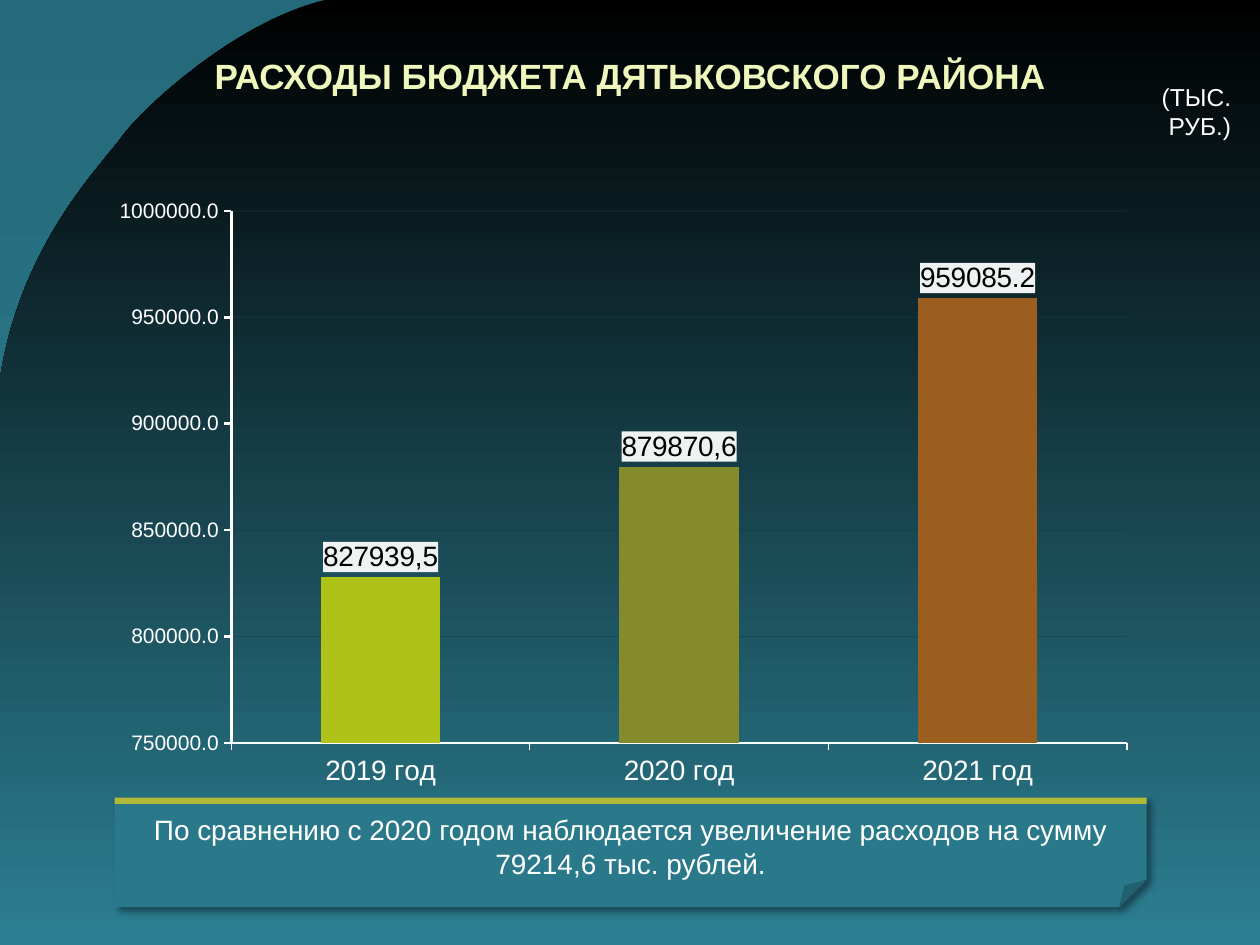
from lxml.etree import fromstring
from pptx import Presentation
from pptx.chart.data import CategoryChartData
from pptx.dml.color import RGBColor
from pptx.enum.chart import XL_CHART_TYPE as Chart, XL_LABEL_POSITION as Spot
from pptx.enum.chart import XL_TICK_MARK as Tick
from pptx.enum.shapes import MSO_SHAPE as Shape
from pptx.enum.text import MSO_ANCHOR as Anchor, PP_ALIGN as Align
from pptx.oxml.ns import nsdecls, qn
from pptx.util import Inches, Pt

COLORS = {
    "white": "FFFFFF", "black": "000000", "top": "256A7A", "teal": "2C7F92",
    "title": "F0F7BD", "note": "2A798B", "strip": "B2B838", "grid": "163F49",
    "label": "EFF2F3", "lime": "AEC218", "olive": "858A2A", "rust": "9C5E1F",
}
NS = nsdecls("a", "c")
SHADOW = (
    f'<a:effectLst {NS}><a:outerShdw blurRad="{{blur}}" dist="{{dist}}" dir="2700000">'
    '<a:srgbClr val="000000"><a:alpha val="{alpha}"/></a:srgbClr>'
    "</a:outerShdw></a:effectLst>"
)


def rgb(name):
    return RGBColor.from_string(COLORS[name])


def style(frame, size, color, align):
    par = frame.paragraphs[0]
    par.alignment = align
    font = par.runs[0].font
    font.name, font.size = "Arial", Pt(size)
    font.color.rgb = rgb(color)
    return font


prs = Presentation()
prs.slide_width, prs.slide_height = Inches(10), Inches(7.5)
slide = prs.slides.add_slide(prs.slide_layouts[5])
shapes = slide.shapes

# Backdrop: the curve is sampled from its Bezier segments
start = (2.58, 0)
curves = [
    ((1.9, 0.16), (1.16, 0.83), (0.98, 1.07)),
    ((0.8, 1.32), (0.16, 1.94), (0, 3.01)),
]
dots = []
here = start
for one, two, end in curves:
    for step in range(1, 31):
        t = step / 30
        dots.append(tuple(
            Inches((1 - t) ** 3 * a + 3 * t * (1 - t) ** 2 * b
                   + 3 * t * t * (1 - t) * c + t ** 3 * d)
            for a, b, c, d in zip(here, one, two, end)))
    here = end
dots += [(Inches(x), Inches(y)) for x, y in ((0, 7.5), (10, 7.5), (10, 0))]
outline = shapes.build_freeform(Inches(start[0]), Inches(start[1]), scale=1.0)
outline.add_line_segments(dots, close=True)
curve = outline.convert_to_shape()
curve.shadow.inherit = False
curve.line.fill.background()
for fill, top in ((slide.background.fill, "top"), (curve.fill, "black")):
    fill.gradient()
    fill.gradient_angle = 270
    for stop, color in zip(fill.gradient_stops, (top, "teal")):
        stop.color.rgb = rgb(color)

# Chart
data = CategoryChartData(number_format="0.0")
data.categories = ["2019 год", "2020 год", "2021 год"]
data.add_series("Series 1", (827939.5, 879870.6, 959085.2))
chart = shapes.add_chart(
    Chart.COLUMN_CLUSTERED, Inches(0.91), Inches(1.58), Inches(8.19), Inches(4.73), data
).chart
chart.has_legend = chart.has_title = False
chart.font.name, chart.font.size = "Arial", Pt(16)
chart.font.color.rgb = rgb("white")
area = chart._chartSpace.chart.plotArea
for old in area.findall(qn("c:layout")):
    area.remove(old)
box = "".join(
    f'<c:{tag} val="{val}"/>' for tag, val in (
        ("layoutTarget", "inner"), ("xMode", "edge"), ("yMode", "edge"),
        ("x", 0.113), ("y", 0.02), ("w", 0.868), ("h", 0.893)))
area.insert(0, fromstring(
    f"<c:layout {NS}><c:manualLayout>{box}</c:manualLayout></c:layout>"))

values, cats = chart.value_axis, chart.category_axis
for axis, width in ((values, 1.5), (cats, 0.75)):
    axis.major_tick_mark, axis.minor_tick_mark = Tick.OUTSIDE, Tick.NONE
    axis.format.line.color.rgb = rgb("white")
    axis.format.line.width = Pt(width)
values.minimum_scale, values.maximum_scale = 750000, 1000000
values.major_unit = 50000
values.tick_labels.font.size = Pt(12)
values.tick_labels.number_format = "0.0"
values.tick_labels.number_format_is_linked = False
grid = values.major_gridlines.format.line
grid.color.rgb, grid.width = rgb("grid"), Pt(0.75)
tint = next(values._element.find(qn("c:majorGridlines")).iter(qn("a:srgbClr")))
tint.append(fromstring(f'<a:alpha {NS} val="50000"/>'))

plot = chart.plots[0]
plot.gap_width, plot.vary_by_categories = 150, False
series = plot.series[0]
for i, color in enumerate(("lime", "olive", "rust")):
    fill = series.points[i].format.fill
    fill.solid()
    fill.fore_color.rgb = rgb(color)
labels = series.data_labels
labels.show_value, labels.position = True, Spot.OUTSIDE_END
labels.number_format, labels.number_format_is_linked = "0.0", False
labels.font.name, labels.font.size = "Arial", Pt(16)
labels.font.color.rgb = rgb("black")
for i, text in enumerate(("827939,5", "879870,6")):
    label = series.points[i].data_label
    label.text_frame.text = text
    style(label.text_frame, 16, "black", Align.CENTER)
    label.position = Spot.OUTSIDE_END
tree = labels._element
back = (f'<c:spPr {NS}><a:solidFill><a:srgbClr val="{COLORS["label"]}"/>'
        "</a:solidFill></c:spPr>")
tree.find(qn("c:numFmt")).addnext(fromstring(back))
for item in tree.findall(qn("c:dLbl")):
    item.find(qn("c:tx")).addnext(fromstring(back))

# Title, moved in front of the backdrop
title = shapes.title
title.left, title.top = Inches(0.5), Inches(0.25)
title.width, title.height = Inches(9), Inches(0.7)
shapes._spTree.append(title._element)
title.text_frame.text = "РАСХОДЫ БЮДЖЕТА ДЯТЬКОВСКОГО РАЙОНА"
title.text_frame.vertical_anchor = Anchor.MIDDLE
font = style(title.text_frame, 20, "title", Align.CENTER)
font.bold = True
font._element.find(qn("a:solidFill")).addnext(
    fromstring(SHADOW.format(blur=Pt(3), dist=Pt(3), alpha=100000)))

# Note with its strip
note = shapes.add_shape(
    Shape.FOLDED_CORNER, Inches(0.91), Inches(6.33), Inches(8.19), Inches(0.87))
strip = shapes.add_shape(
    Shape.RECTANGLE, Inches(0.91), Inches(6.33), Inches(8.19), Inches(0.05))
for shape, color in ((note, "note"), (strip, "strip")):
    shape.shadow.inherit = False
    shape.fill.solid()
    shape.fill.fore_color.rgb = rgb(color)
    shape.line.fill.background()
props = note._element.spPr
next(props.iter(qn("a:avLst"))).append(
    fromstring(f'<a:gd {NS} name="adj" fmla="val 25000"/>'))
props.replace(props.find(qn("a:effectLst")),
              fromstring(SHADOW.format(blur=Pt(4), dist=Pt(3), alpha=40000)))
frame = note.text_frame
frame.text = ("По сравнению с 2020 годом наблюдается увеличение "
              "расходов на сумму 79214,6 тыс. рублей.")
frame.word_wrap, frame.vertical_anchor = True, Anchor.MIDDLE
frame.margin_top, frame.margin_bottom = Inches(0.12), Inches(0)
style(frame, 16, "white", Align.CENTER)

# Unit
unit = shapes.add_textbox(Inches(8.7), Inches(0.6), Inches(1.17), Inches(0.57)).text_frame
unit.text = "(ТЫС. РУБ.)"
unit.word_wrap = True
style(unit, 14, "white", Align.RIGHT)

prs.save("out.pptx")
